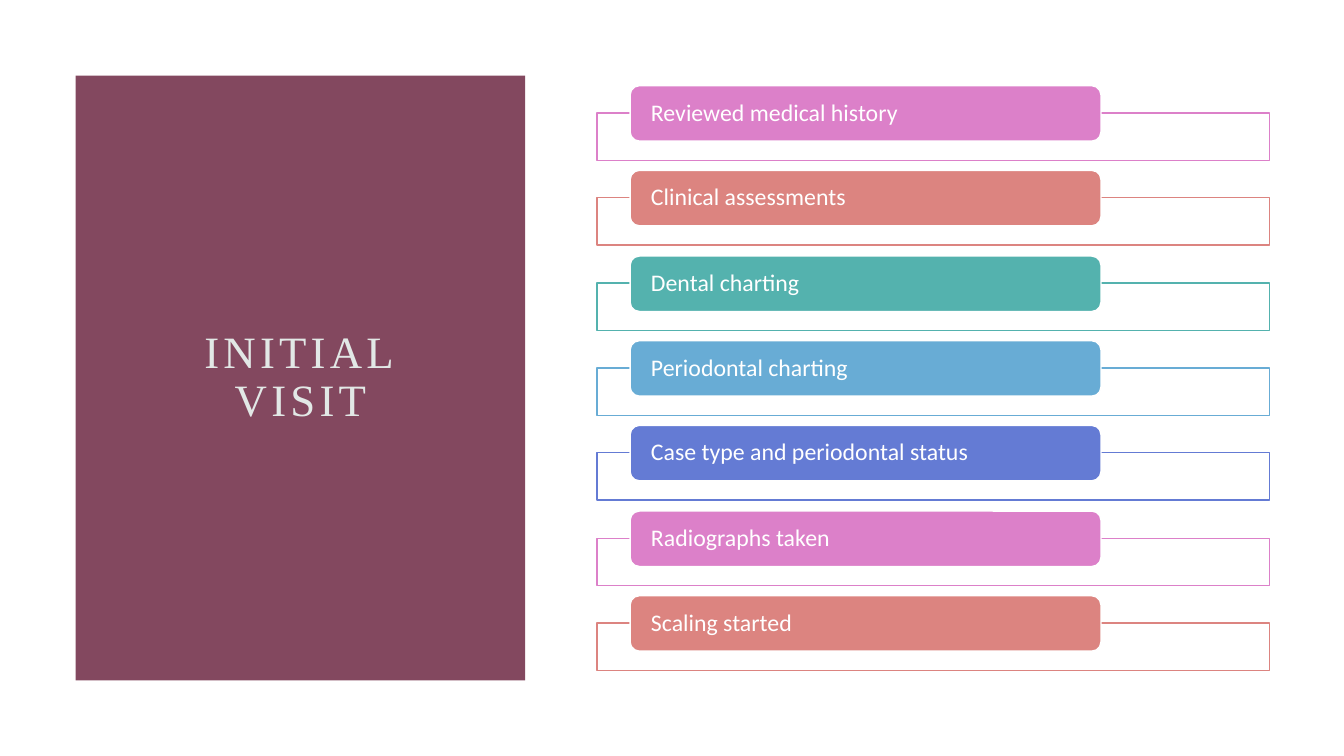
"""Build the "Initial visit" slide: a title panel beside a list of labelled steps."""
import pptx
import pptx.dml.color
import pptx.enum.shapes
import pptx.enum.text
import pptx.oxml
import pptx.oxml.ns
import pptx.util

PX = 9144
COLORS = {
    "panel": "83485F",
    "title": "E2E8E6",
    "white": "FFFFFF",
    "pink": "DC80C9",
    "coral": "DC8480",
    "teal": "54B2AE",
    "sky": "68ACD5",
    "blue": "647BD4",
}
STEPS = [
    ("Reviewed medical history", "pink"),
    ("Clinical assessments", "coral"),
    ("Dental charting", "teal"),
    ("Periodontal charting", "sky"),
    ("Case type and periodontal status", "blue"),
    ("Radiographs taken", "pink"),
    ("Scaling started", "coral"),
]
FIRST_TOP, LAST_TOP = 85, 591
SHAPES = pptx.enum.shapes.MSO_SHAPE


def color(name):
    """Return the named colour."""
    return pptx.dml.color.RGBColor.from_string(COLORS[name])


def add_block(page, kind, bounds, fill, line=None):
    """Add a filled preset shape, outlined when a line colour is named."""
    block = page.shapes.add_shape(kind, *(length * PX for length in bounds))
    block.shadow.inherit = False
    block.fill.solid()
    block.fill.fore_color.rgb = color(fill)
    if line:
        block.line.color.rgb = color(line)
        block.line.width = pptx.util.Pt(1)
    else:
        block.line.fill.background()
    return block


def write(shape, text, font, size, shade, align):
    """Write one vertically centred paragraph and return its run."""
    frame = shape.text_frame
    frame.word_wrap = True
    frame.auto_size = pptx.enum.text.MSO_AUTO_SIZE.NONE
    frame.vertical_anchor = pptx.enum.text.MSO_ANCHOR.MIDDLE
    para = frame.paragraphs[0]
    para.alignment = align
    para.line_spacing = 0.9
    span = para.add_run()
    span.text = text
    span.font.name = font
    span.font.size = pptx.util.Pt(size)
    span.font.color.rgb = color(shade)
    return span


def add_title(page, text):
    """Fill the title placeholder and set a coloured panel behind it."""
    title = page.shapes.title
    title.left, title.top, title.width, title.height = (
        length * PX for length in (150, 150, 296, 450))
    span = write(title, text, "Times New Roman", 32, "title",
                 pptx.enum.text.PP_ALIGN.CENTER)
    span.font._element.set("spc", "300")
    panel = add_block(page, SHAPES.RECTANGLE, (75, 75, 446, 600), "panel")
    title.element.addprevious(panel.element)


def add_step(page, top, text, shade):
    """Add an outlined frame with a rounded label over its upper edge."""
    frame = add_block(page, SHAPES.RECTANGLE, (592, top + 27, 667, 47), "white", shade)
    tint = frame.fill._xPr.find(".//" + pptx.oxml.ns.qn("a:srgbClr"))
    tint.append(pptx.oxml.parse_xml(
        f'<a:alpha {pptx.oxml.ns.nsdecls("a")} val="90000"/>'))
    label = add_block(page, SHAPES.ROUNDED_RECTANGLE, (625, top, 467, 55), shade, "white")
    write(label, text, "Calibri", 17, "white", pptx.enum.text.PP_ALIGN.LEFT)
    label.text_frame.margin_left = label.text_frame.margin_right = 18 * PX
    label.text_frame.margin_top = label.text_frame.margin_bottom = 0


def main():
    """Build and save the deck."""
    deck = pptx.Presentation()
    deck.slide_width = pptx.util.Inches(13.33)
    deck.slide_height = pptx.util.Inches(7.5)
    page = deck.slides.add_slide(deck.slide_layouts.get_by_name("Title Only"))
    add_title(page, "INITIAL VISIT")
    pitch = (LAST_TOP - FIRST_TOP) / (len(STEPS) - 1)
    for row, (text, shade) in enumerate(STEPS):
        add_step(page, round(FIRST_TOP + row * pitch), text, shade)
    deck.save("out.pptx")


if __name__ == "__main__":
    main()
